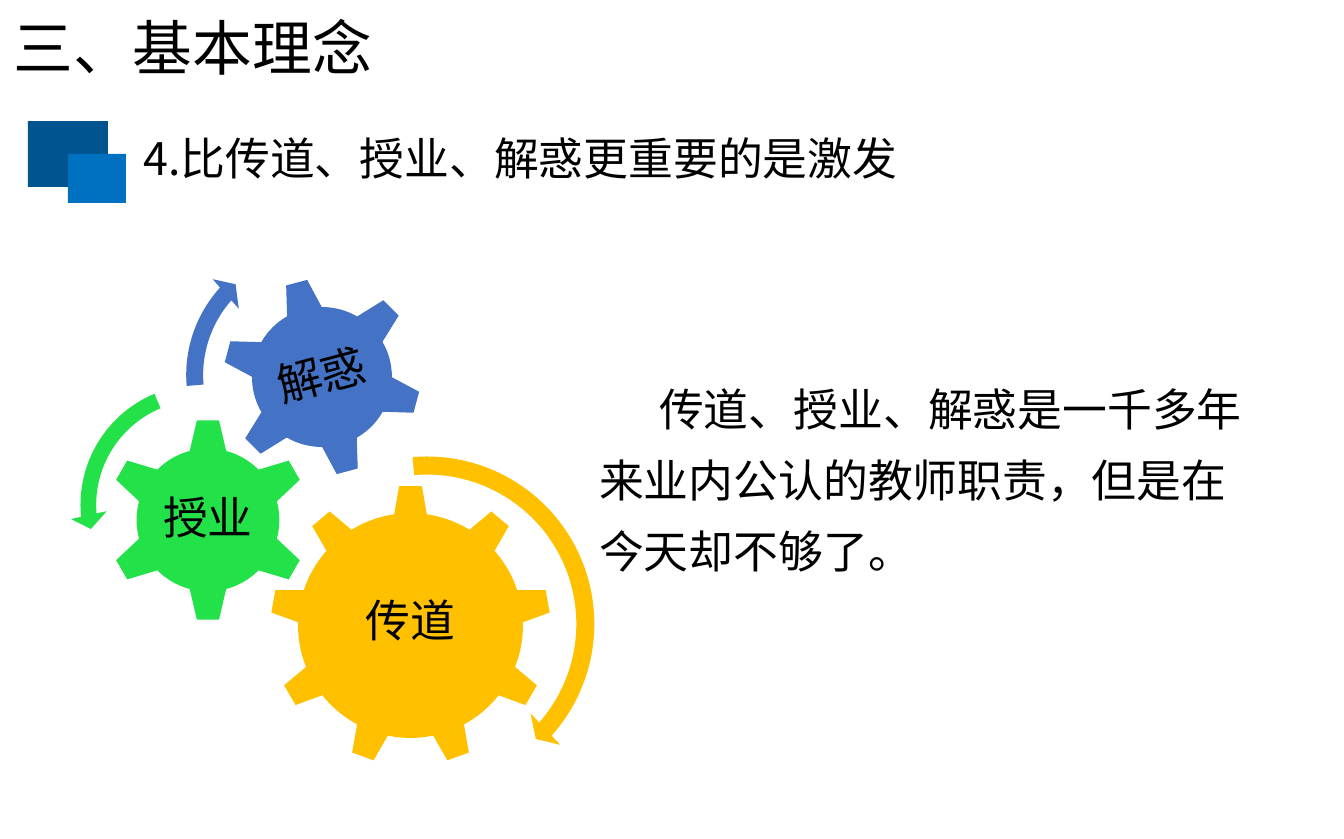
from lxml.etree import SubElement
from pptx import Presentation
from pptx.dml.color import RGBColor
from pptx.enum.shapes import MSO_SHAPE
from pptx.enum.text import MSO_ANCHOR, MSO_AUTO_SIZE, PP_ALIGN
from pptx.oxml.ns import qn
from pptx.util import Pt

EMU_PER_PX = 914400 / 134.4
FONT = "Noto Sans CJK SC"
COLORS = {
    "text": "000000",
    "gold": "FFC000",
    "green": "23E148",
    "blue": "4472C4",
    "navy": "005490",
    "azure": "0070C0",
}


def px(length):
    return round(length * EMU_PER_PX)


class SlideBuilder:
    """Draws styled elements on one slide, with lengths in px."""

    def __init__(self, slide):
        self.slide = slide

    def add_run(self, paragraph, text, size=24):
        run = paragraph.add_run()
        run.text = text
        run.font.size = Pt(size)
        run.font.name = FONT
        run.font.color.rgb = RGBColor.from_string(COLORS["text"])
        SubElement(run.font._element, qn("a:ea"), typeface=FONT)

    def title(self, text, left, top, width, height):
        title = self.slide.shapes.title
        title.left, title.top, title.width, title.height = map(px, (left, top, width, height))
        frame = title.text_frame
        frame.auto_size = MSO_AUTO_SIZE.NONE
        frame.vertical_anchor = MSO_ANCHOR.MIDDLE
        frame.paragraphs[0].alignment = PP_ALIGN.LEFT
        self.add_run(frame.paragraphs[0], text, 32)

    def text(self, text, left, top, width, height, wrap=True, spacing=None, indent=0):
        box = self.slide.shapes.add_textbox(*map(px, (left, top, width, height)))
        frame = box.text_frame
        frame.word_wrap = wrap
        paragraph = frame.paragraphs[0]
        if spacing:
            paragraph.line_spacing = Pt(spacing)
        if indent:
            paragraph._p.get_or_add_pPr().set("indent", str(px(indent)))
        self.add_run(paragraph, text)

    def shape(self, kind, color, left, top, width, height):
        shape = self.slide.shapes.add_shape(kind, *map(px, (left, top, width, height)))
        shape.shadow.inherit = False
        shape.fill.solid()
        shape.fill.fore_color.rgb = RGBColor.from_string(COLORS[color])
        shape.line.fill.background()
        return shape

    def gear(self, label, kind, color, left, top, size, rotation=0):
        gear = self.shape(kind, color, left, top, size, size)
        gear.rotation = rotation
        frame = gear.text_frame
        frame.margin_left = frame.margin_right = px(4)
        frame.margin_top = frame.margin_bottom = px(4)
        frame.vertical_anchor = MSO_ANCHOR.MIDDLE
        paragraph = frame.paragraphs[0]
        paragraph.alignment = PP_ALIGN.CENTER
        paragraph.line_spacing = 0.9
        self.add_run(paragraph, label)

    def arrow(self, kind, color, left, top, size, adjustments):
        arrow = self.shape(kind, color, left, top, size, size)
        for index, value in enumerate(adjustments):
            arrow.adjustments[index] = value


def main():
    presentation = Presentation()
    presentation.slide_width, presentation.slide_height = px(1344), px(839)
    slide = presentation.slides.add_slide(presentation.slide_layouts[5])
    builder = SlideBuilder(slide)

    builder.title("三、基本理念", 0, 0, 602, 93)
    builder.text("4.比传道、授业、解惑更重要的是激发", 130, 124, 793, 67, wrap=False)
    builder.shape(MSO_SHAPE.RECTANGLE, "navy", 28, 121, 80, 66)
    builder.shape(MSO_SHAPE.RECTANGLE, "azure", 68, 154, 58, 49)
    builder.text("传道、授业、解惑是一千多年来业内公认的教师职责，但是在今天却不够了。",
                 586, 358, 672, 222, spacing=38, indent=60)

    builder.gear("传道", MSO_SHAPE.GEAR_9, "gold", 270, 485, 281)
    builder.gear("授业", MSO_SHAPE.GEAR_6, "green", 106, 418, 204)
    builder.gear("解惑", MSO_SHAPE.GEAR_6, "blue", 222, 277, 200, rotation=345)

    builder.arrow(MSO_SHAPE.CIRCULAR_ARROW, "gold", 247, 444, 360,
                  (0.05, 2.99, 24.96, 159.05, 0.06))
    builder.arrow(MSO_SHAPE.LEFT_CIRCULAR_ARROW, "green", 70, 374, 262,
                  (0.06, 4.3, 104.89, 148.38, 0.07))
    builder.arrow(MSO_SHAPE.CIRCULAR_ARROW, "blue", 175, 234, 282,
                  (0.06, 3.94, 133.14, 105.08, 0.07))

    presentation.save("out.pptx")


if __name__ == "__main__":
    main()
